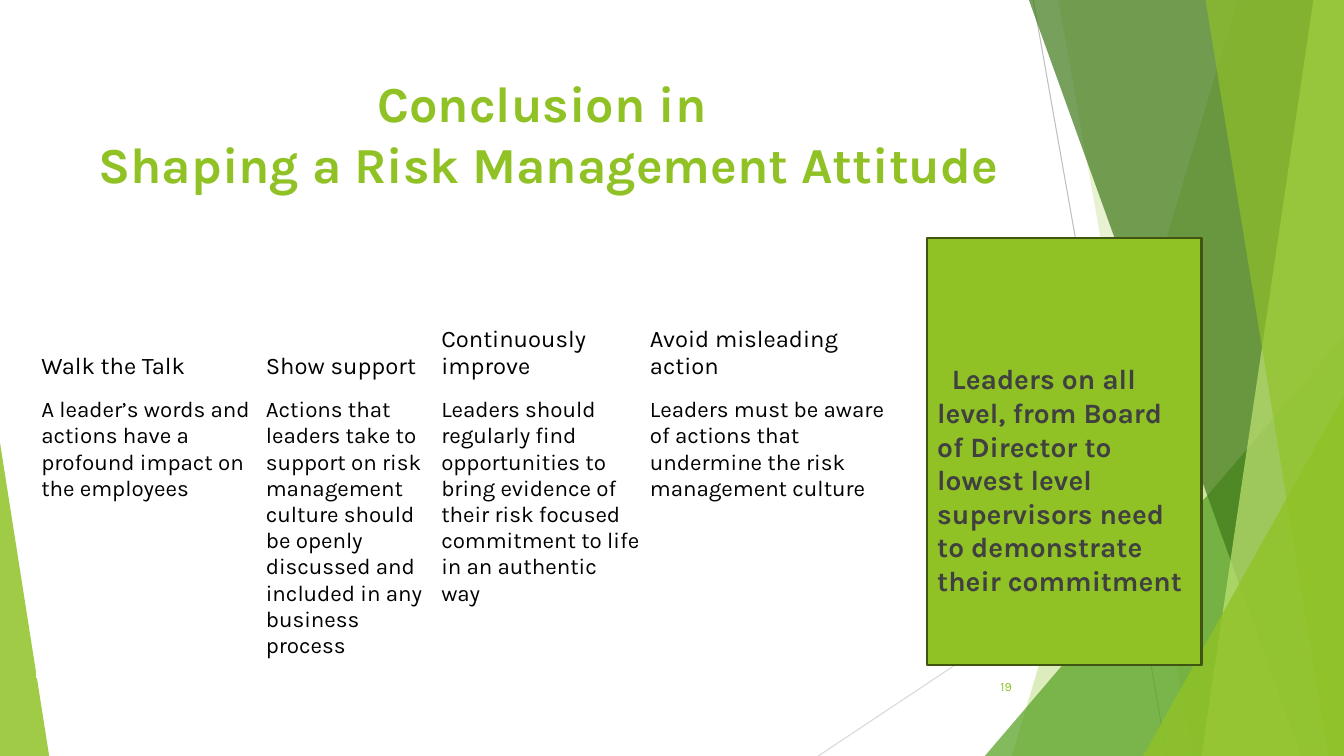
import pptx
import pptx.util
import pptx.dml.color
import pptx.enum.shapes
import pptx.enum.text
import pptx.oxml
import pptx.oxml.ns

Cm = pptx.util.Cm
Pt = pptx.util.Pt
RGB = pptx.dml.color.RGBColor.from_string
Align = pptx.enum.text.PP_ALIGN
Anchor = pptx.enum.text.MSO_ANCHOR
Preset = pptx.enum.shapes.MSO_SHAPE

COLORS = {
    "lime": "90C226", "leaf": "54A021", "forest": "3F7819", "pale": "C0E474",
    "outline": "3F5511", "dark": "404040", "black": "000000",
    "gray": "BFBFBF", "mist": "D9D9D9",
}
WIDTH, HEIGHT = 33.87, 19.05


def write(frame, text, size, color, bold=False, align=Align.LEFT, **frame_format):
    frame.word_wrap = True
    for name, value in frame_format.items():
        setattr(frame, name, value)
    paragraph = frame.paragraphs[0]
    paragraph.text = text
    paragraph.alignment = align
    font_format = {"name": "Karla", "size": Pt(size), "bold": bold}
    for name, value in font_format.items():
        setattr(paragraph.font, name, value)
    paragraph.font.color.rgb = RGB(COLORS[color])
    return paragraph


def tint(panel, color, opacity):
    panel.shadow.inherit = False
    panel.line.fill.background()
    panel.fill.solid()
    panel.fill.fore_color.rgb = RGB(COLORS[color])
    shade = panel.fill._xPr.find(".//" + pptx.oxml.ns.qn("a:srgbClr"))
    alpha = pptx.oxml.parse_xml(
        f'<a:alpha {pptx.oxml.ns.nsdecls("a")} val="{opacity * 1000}"/>')
    shade.append(alpha)


deck = pptx.Presentation()
deck.slide_width, deck.slide_height = Cm(WIDTH), Cm(HEIGHT)
slide = deck.slides.add_slide(deck.slide_layouts[6])
shapes = slide.shapes

rays = [
    (26.04, 0, 29.41, HEIGHT, "gray"),
    (WIDTH, 10.24, 20.62, HEIGHT, "mist"),
]
for x1, y1, x2, y2, color in rays:
    ray = shapes.add_connector(
        pptx.enum.shapes.MSO_CONNECTOR.STRAIGHT, Cm(x1), Cm(y1), Cm(x2), Cm(y2))
    ray.line.color.rgb = RGB(COLORS[color])
    ray.line.width = Pt(0.75)
    ray._element.spPr.append(
        pptx.oxml.parse_xml(f'<a:effectLst {pptx.oxml.ns.nsdecls("a")}/>'))

facets = [
    ("band", (31.19, 25.5), "lime", 30),
    ("band", (26.67, 30.05), "lime", 20),
    ("triangle", (24.82, 8.46, 9.05, 1), "leaf", 72),
    ("band", (25.93, 32.79), "forest", 70),
    ("band", (33.1, 30.28), "pale", 70),
    ("band", (30.38, 33.48), "lime", 65),
    ("triangle", (28.81, 9.98, 5.06, 1), "lime", 80),
    ("triangle", (0, 11.15, 1.24, 0), "lime", 85),
]
for kind, place, color, opacity in facets:
    if kind == "band":
        top_x, bottom_x = place
        outline = shapes.build_freeform(Cm(top_x), 0)
        outline.add_line_segments([
            (Cm(WIDTH), 0), (Cm(WIDTH), Cm(HEIGHT)), (Cm(bottom_x), Cm(HEIGHT))])
        facet = outline.convert_to_shape()
    else:
        left, top, width, apex = place
        facet = shapes.add_shape(
            Preset.ISOSCELES_TRIANGLE, Cm(left), Cm(top), Cm(width), Cm(HEIGHT - top))
        facet.adjustments[0] = apex
    tint(facet, color, opacity)

title = shapes.add_textbox(Cm(1.88), Cm(1.7), Cm(23.88), Cm(3.66))
write(title.text_frame, "Conclusion in \vShaping a Risk Management Attitude",
      36, "lime", True, Align.CENTER)

callout = shapes.add_shape(Preset.RECTANGLE, Cm(23.37), Cm(6), Cm(6.91), Cm(10.77))
callout.shadow.inherit = False
callout.fill.solid()
callout.fill.fore_color.rgb = RGB(COLORS["lime"])
callout.line.color.rgb = RGB(COLORS["outline"])
callout.line.width = Pt(1.5)
message = write(
    callout.text_frame,
    "Leaders on all level, from Board of Director to lowest level supervisors "
    "need to demonstrate their commitment",
    20, "dark", True, vertical_anchor=Anchor.TOP, margin_top=Cm(3.12))
message._p.get_or_add_pPr().set("indent", str(Cm(0.37)))

page_number = shapes.add_textbox(Cm(23.85), Cm(16.79), Cm(1.9), Cm(1.02))
write(page_number.text_frame, "19", 9, "lime", align=Align.RIGHT,
      vertical_anchor=Anchor.MIDDLE)

attitudes = [
    (5.66, "Walk the Talk",
     "A leader’s words and actions have a profound impact on the employees"),
    (4.42, "Show support",
     "Actions that leaders take to support on risk management culture should be "
     "openly discussed and included in any business process"),
    (5.26, "Continuously improve",
     "Leaders should regularly find opportunities to bring evidence of their risk "
     "focused commitment to life in an authentic way"),
    (6.25, "Avoid misleading action",
     "Leaders must be aware of actions that undermine the risk management culture"),
]
table = shapes.add_table(
    2, len(attitudes), Cm(0.91), Cm(7.16), Cm(21.59), Cm(8.46)).table
table.first_row = table.horz_banding = False
table.rows[0].height, table.rows[1].height = Cm(2.72), Cm(5.74)
cell_format = {"margin_left": Cm(0.13), "margin_top": Cm(0.13),
               "margin_right": Cm(0.13), "margin_bottom": Cm(0.28)}
row_styles = [(17, Anchor.BOTTOM), (16, Anchor.TOP)]
for column, (width, *texts) in enumerate(attitudes):
    table.columns[column].width = Cm(width)
    for row, (text, (size, anchor)) in enumerate(zip(texts, row_styles)):
        cell = table.cell(row, column)
        cell.fill.background()
        cell.vertical_anchor = anchor
        for name, value in cell_format.items():
            setattr(cell, name, value)
        write(cell.text_frame, text, size, "black")

deck.save("out.pptx")
